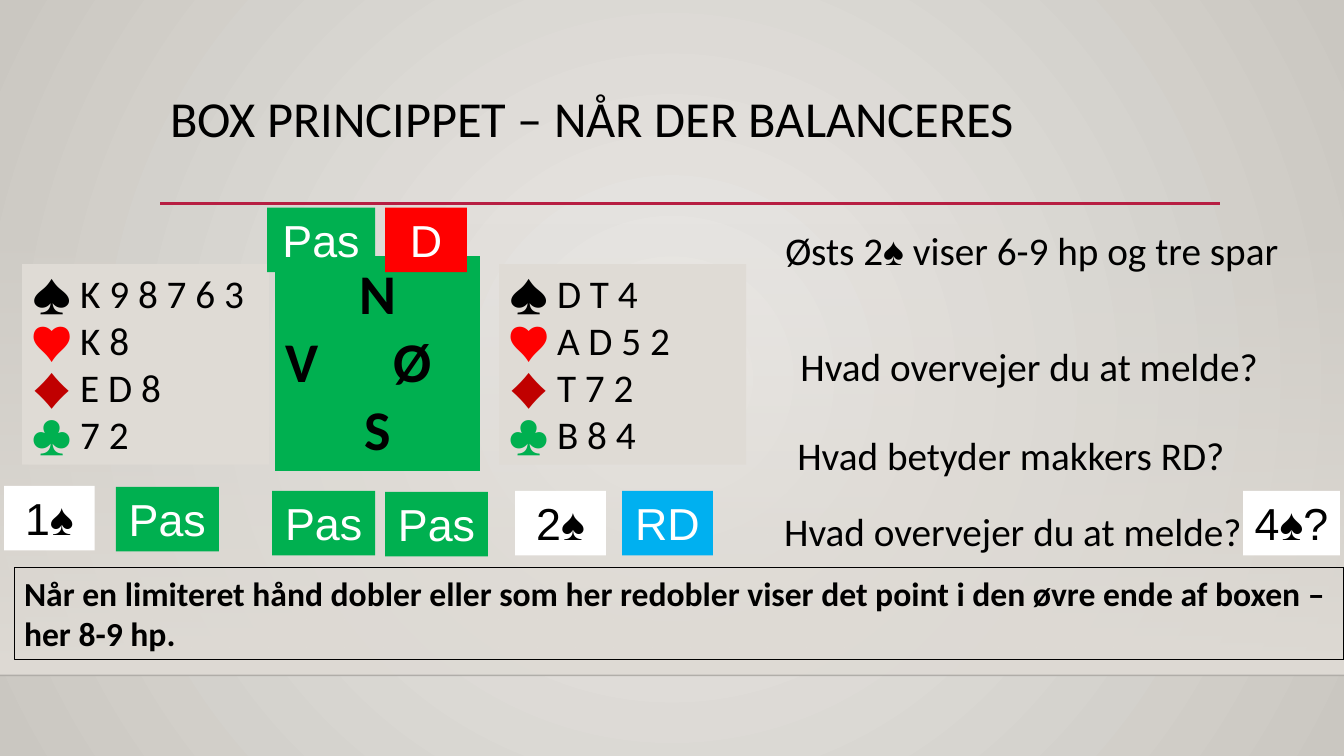
"""Build the bridge bidding slide about the box principle."""
from lxml import etree
from pptx import Presentation
from pptx.dml.color import RGBColor
from pptx.enum.shapes import MSO_CONNECTOR, MSO_SHAPE
from pptx.enum.text import MSO_ANCHOR, PP_ALIGN
from pptx.oxml import parse_xml
from pptx.oxml.ns import nsdecls, qn
from pptx.util import Inches, Pt

BLACK = RGBColor(0x00, 0x00, 0x00)
WHITE = RGBColor(0xFF, 0xFF, 0xFF)
GREEN = RGBColor(0x00, 0xB0, 0x50)
RED = RGBColor(0xFF, 0x00, 0x00)
DARK_RED = RGBColor(0xC0, 0x00, 0x00)
BLUE = RGBColor(0x00, 0xB0, 0xF0)
SAND = RGBColor(0xDF, 0xDB, 0xD5)
CRIMSON = RGBColor(0xB7, 0x1E, 0x42)
PALE = RGBColor(0xEC, 0xEA, 0xE7)
STONE = RGBColor(0xCA, 0xC7, 0xC1)

SUITS = [("♠︎ ", BLACK), ("♥︎ ", RED), ("♦︎ ", DARK_RED), ("♣︎ ", GREEN)]
NO_GRID = "{2D5ABB26-0587-4C30-8999-92F81FD0307C}"
CARD_H = 0.64

HANDS = [
    (0.22, ["K 9 8 7 6 3", "K 8", "E D 8", "7 2"]),
    (4.95, ["D T 4", "A D 5 2", "T 7 2", "B 8 4"]),
]
CARDS = [
    (0.04, 4.82, 0.9, "1♠︎", WHITE),
    (1.15, 4.83, 1.02, "Pas", GREEN),
    (2.65, 2.06, 1.07, "Pas", GREEN),
    (3.82, 2.06, 0.81, "D", RED),
    (2.7, 4.87, 1.02, "Pas", GREEN),
    (3.82, 4.88, 1.02, "Pas", GREEN),
    (5.11, 4.87, 0.9, "2♠︎", WHITE),
    (6.17, 4.87, 0.9, "RD", BLUE),
    (12.33, 4.87, 0.96, "4♠︎?", WHITE),
]
QUESTIONS = [
    (7.69, 2.2, [("Østs 2", "Calibri"), ("♠︎", "Arial"), (" viser 6-9 hp og tre spar", "Calibri")]),
    (7.84, 3.35, [("Hvad overvejer du at melde?", "Calibri")]),
    (7.81, 4.23, [("Hvad betyder makkers RD?", "Calibri")]),
    (7.68, 4.98, [("Hvad overvejer du at melde?", "Calibri")]),
]


def add_run(p, text, size, color=BLACK, font="Calibri", bold=False):
    r = p.add_run()
    r.text = text
    r.font.size = Pt(size)
    r.font.name = font
    r.font.bold = bold
    r.font.color.rgb = color


def add_rect(slide, x, y, w, h, fill=None, line=None):
    sp = slide.shapes.add_shape(MSO_SHAPE.RECTANGLE, Inches(x), Inches(y), Inches(w), Inches(h))
    sp.shadow.inherit = False
    if fill is None:
        sp.fill.background()
    else:
        sp.fill.solid()
        sp.fill.fore_color.rgb = fill
    if line is None:
        sp.line.fill.background()
    else:
        sp.line.color.rgb = line
        sp.line.width = Pt(0.75)
    tf = sp.text_frame
    tf.word_wrap = True
    tf.vertical_anchor = MSO_ANCHOR.TOP
    tf.paragraphs[0].alignment = PP_ALIGN.LEFT
    return sp


def set_alpha(color_element, percent):
    etree.SubElement(color_element, qn("a:alpha")).set("val", str(percent * 1000))


def set_background(slide):
    fill = slide.background.fill
    fill.gradient()
    for stop, color in zip(fill.gradient_stops, (PALE, STONE)):
        stop.color.rgb = color
    grad = slide.background._cSld.find(".//" + qn("a:gradFill"))
    grad.replace(grad.find(qn("a:lin")), parse_xml(
        f'<a:path {nsdecls("a")} path="circle">'
        '<a:fillToRect l="50000" t="50000" r="50000" b="50000"/></a:path>'))


def add_floor(slide):
    sp = add_rect(slide, 0, 2.21, 13.33, 4.49, SAND)
    sp.fill.gradient()
    sp.fill.gradient_angle = 270
    for stop in sp.fill.gradient_stops:
        stop.color.rgb = SAND
    set_alpha(sp._element.spPr.find(".//" + qn("a:srgbClr")), 0)


def add_rule(slide, x1, x2, y, color, width, opacity=100):
    line = slide.shapes.add_connector(
        MSO_CONNECTOR.STRAIGHT, Inches(x1), Inches(y), Inches(x2), Inches(y))
    line.line.color.rgb = color
    line.line.width = Pt(width)
    sp_pr = line._element.spPr
    set_alpha(sp_pr.find(".//" + qn("a:srgbClr")), opacity)
    etree.SubElement(sp_pr, qn("a:effectLst"))


def add_title(slide, text):
    title = slide.shapes.title
    title.left, title.top = Inches(1.59), Inches(0.88)
    title.width, title.height = Inches(10.5), Inches(1.15)
    title.text_frame.vertical_anchor = MSO_ANCHOR.TOP
    p = title.text_frame.paragraphs[0]
    p.alignment = PP_ALIGN.LEFT
    p.line_spacing = 0.9
    add_run(p, text, 36)


def add_compass(slide):
    frame = slide.shapes.add_table(3, 3, Inches(0.84), Inches(1.52), Inches(6.67), Inches(4.46))
    table = frame.table
    table.first_row = table.horz_banding = False
    table._tbl.tblPr.find(qn("a:tableStyleId")).text = NO_GRID
    for column, width in zip(table.columns, (1.89, 2.03, 2.75)):
        column.width = Inches(width)
    for row, height in zip(table.rows, (1.02, 2.11, 1.33)):
        row.height = Inches(height)
    for cell in table.iter_cells():
        cell.fill.background()
    center = table.cell(1, 1)
    center.fill.solid()
    center.fill.fore_color.rgb = GREEN
    tf = center.text_frame
    for i, text in enumerate(("N", "V\tØ", "S")):
        p = tf.add_paragraph() if i else tf.paragraphs[0]
        if "\t" in text:
            tabs = etree.SubElement(p._p.get_or_add_pPr(), qn("a:tabLst"))
            etree.SubElement(tabs, qn("a:tab"), pos=str(Inches(1.07)), algn="l")
        else:
            p.alignment = PP_ALIGN.CENTER
        add_run(p, text, 40, bold=True)


def add_hand(slide, x, holdings):
    tf = add_rect(slide, x, 2.62, 2.45, 1.99, SAND).text_frame
    for i, ((suit, color), cards) in enumerate(zip(SUITS, holdings)):
        p = tf.add_paragraph() if i else tf.paragraphs[0]
        p.alignment = PP_ALIGN.LEFT
        add_run(p, suit, 28, color)
        add_run(p, cards, 28)


def add_card(slide, x, y, w, text, fill):
    p = add_rect(slide, x, y, w, CARD_H, fill).text_frame.paragraphs[0]
    p.alignment = PP_ALIGN.CENTER
    add_run(p, text, 32, BLACK if fill == WHITE else WHITE, "Arial")


def add_question(slide, x, y, runs):
    tf = slide.shapes.add_textbox(Inches(x), Inches(y), Inches(5.43), Inches(0.57)).text_frame
    tf.word_wrap = True
    for text, font in runs:
        add_run(tf.paragraphs[0], text, 28, font=font)


def add_conclusion(slide, text):
    sp = add_rect(slide, 0.14, 5.63, 13.19, 0.91, line=BLACK)
    add_run(sp.text_frame.paragraphs[0], text, 24, bold=True)


def main():
    prs = Presentation()
    prs.slide_width, prs.slide_height = Inches(13.33), Inches(7.5)
    slide = prs.slides.add_slide(prs.slide_layouts[5])
    set_background(slide)
    add_floor(slide)
    add_rule(slide, 0, 13.33, 6.7, BLACK, 1, opacity=20)
    add_rule(slide, 1.59, 12.1, 2.02, CRIMSON, 2.5)
    add_title(slide, "BOX PRINCIPPET – NÅR DER BALANCERES")
    add_compass(slide)
    for hand in HANDS:
        add_hand(slide, *hand)
    for question in QUESTIONS:
        add_question(slide, *question)
    add_conclusion(slide, "Når en limiteret hånd dobler eller som her redobler viser "
                          "det point i den øvre ende af boxen – her 8-9 hp.")
    for card in CARDS:
        add_card(slide, *card)
    prs.save("out.pptx")


if __name__ == "__main__":
    main()
